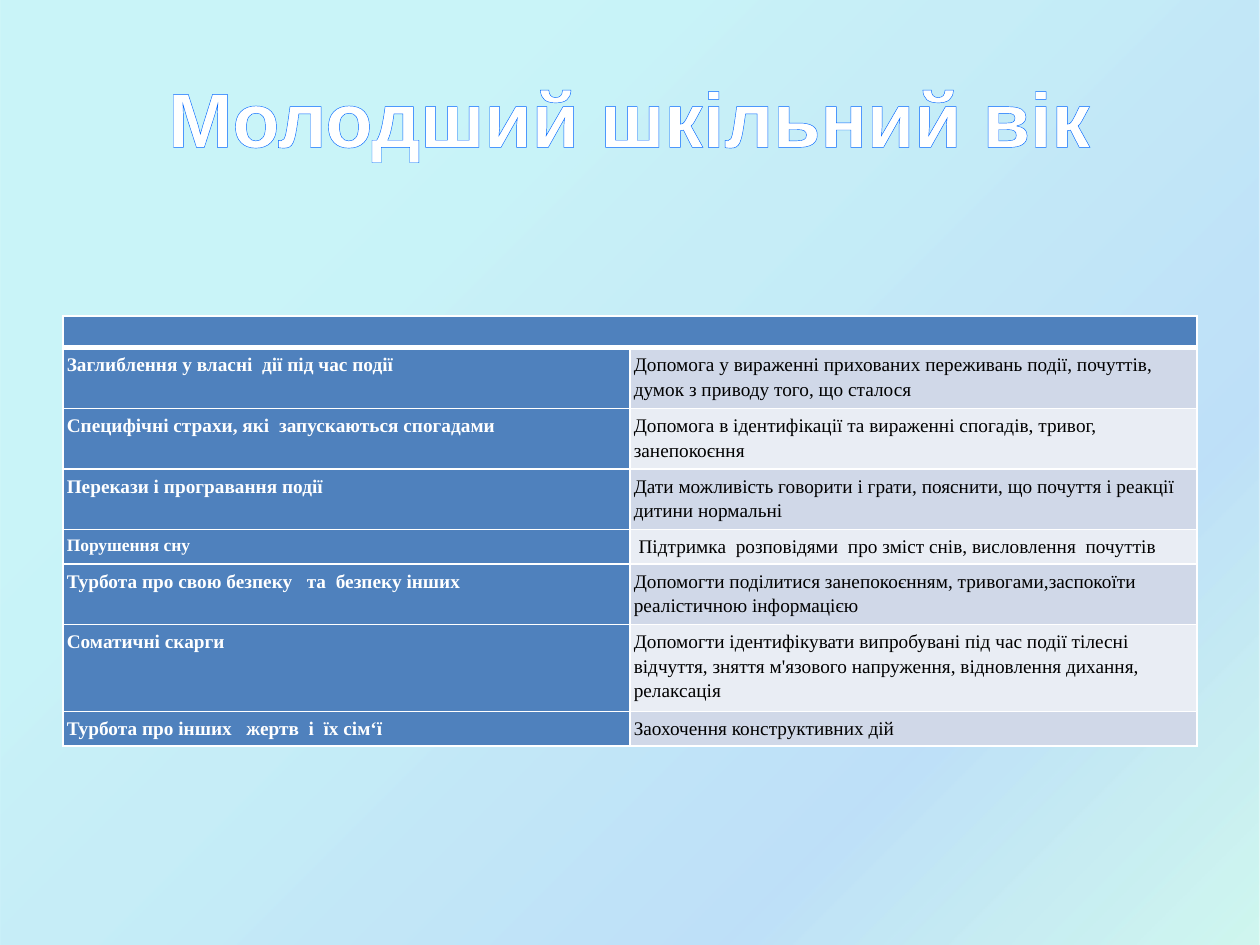
from dataclasses import dataclass

from lxml import etree
from pptx import Presentation
from pptx.dml.color import RGBColor
from pptx.enum.shapes import MSO_SHAPE
from pptx.enum.text import MSO_ANCHOR, PP_ALIGN
from pptx.oxml.ns import qn
from pptx.util import Pt

RECT = MSO_SHAPE.RECTANGLE
MIDDLE = MSO_ANCHOR.MIDDLE
TOP = MSO_ANCHOR.TOP
CENTER = PP_ALIGN.CENTER
LEFT = PP_ALIGN.LEFT


@dataclass(frozen=True)
class Theme:
    head: str = "Arial"
    body: str = "Times New Roman"
    big: float = 44
    text: float = 11
    small: float = 10
    white: str = "FFFFFF"
    black: str = "000000"
    blue: str = "4F81BD"
    edge: str = "0066FF"
    bands: tuple = ("D0D8E8", "E9EDF4")
    # position, colour and opacity, the first and last in percent
    stops: tuple = ((25, "21D6E0", 23), (75, "0087E6", 25),
                    (100, "03D4A8", 18), (100, "005CBF", 26))


def add(node, tag, **attrs):
    return etree.SubElement(node, qn(tag), {k: str(v) for k, v in attrs.items()})


def stroke(node, tag, color, width):
    """Append a solid line, such as a cell border or a text outline."""
    line = add(node, tag, w=int(Pt(width)))
    add(add(line, "a:solidFill"), "a:srgbClr", val=color)
    return line


class Deck:
    def __init__(self, theme, width, height):
        self.theme = theme
        self.file = Presentation()
        self.file.slide_width = Pt(width)
        self.file.slide_height = Pt(height)
        self.slide = self.file.slides.add_slide(self.file.slide_layouts[6])

    def run(self, para, text, font, size, color, bold):
        run = para.add_run()
        run.text = text
        run.font.name = font
        run.font.size = Pt(size)
        run.font.bold = bold
        run.font.color.rgb = RGBColor.from_string(color)
        return run

    def wash(self, *box):
        """Add a rectangle with the theme's translucent gradient."""
        shape = self.slide.shapes.add_shape(RECT, *map(Pt, box))
        shape.shadow.inherit = False
        shape.line.fill.background()
        shape.fill.gradient()
        shape.fill.gradient_angle = 315
        stops = shape._element.spPr.find(".//" + qn("a:gsLst"))
        for old in list(stops):
            stops.remove(old)
        for place, color, alpha in self.theme.stops:
            stop = add(stops, "a:gs", pos=place * 1000)
            tint = add(stop, "a:srgbClr", val=color)
            add(tint, "a:alpha", val=alpha * 1000)

    def title(self, text, *box):
        look = self.theme
        frame = self.slide.shapes.add_textbox(*map(Pt, box)).text_frame
        frame.word_wrap = True
        frame.vertical_anchor = MIDDLE
        para = frame.paragraphs[0]
        para.alignment = CENTER
        run = self.run(para, text, look.head, look.big, look.white, True)
        props = run._r.get_or_add_rPr()
        props.insert(0, stroke(props, "a:ln", look.edge, 1.45))

    def cell(self, cell, fill, top=1, bottom=1):
        """Set the margins, borders and fill of a cell."""
        cell.margin_left = cell.margin_right = Pt(2.16)
        cell.margin_top = cell.margin_bottom = Pt(2.16)
        cell.vertical_anchor = TOP
        props = cell._tc.get_or_add_tcPr()
        for side, width in zip("LRTB", (1, 1, top, bottom)):
            stroke(props, "a:ln" + side, self.theme.white, width)
        cell.fill.solid()
        cell.fill.fore_color.rgb = RGBColor.from_string(fill)

    def label(self, cell, text, size, color, bold, indent=0):
        para = cell.text_frame.paragraphs[0]
        para.alignment = LEFT
        para.line_spacing = 1.15
        if indent:
            para._p.get_or_add_pPr().set("indent", str(int(Pt(indent))))
        self.run(para, text, self.theme.body, size, color, bold)

    def table(self, rows, left, top, width, heights):
        look = self.theme
        grid = self.slide.shapes.add_table(
            len(rows) + 1, 2, Pt(left), Pt(top), Pt(width), Pt(sum(heights))).table
        grid.first_row = grid.horz_banding = False
        for row, height in zip(grid.rows, heights):
            row.height = Pt(height)

        for cell in grid.rows[0].cells:
            self.cell(cell, look.blue, bottom=3)
            add(cell.text_frame.paragraphs[0]._p, "a:endParaRPr",
                sz=int(look.small * 100))
        grid.cell(0, 0).merge(grid.cell(0, 1))

        for i, (need, aid, size, indent) in enumerate(rows, 1):
            edge = 3 if i == 1 else 1
            name, note = grid.cell(i, 0), grid.cell(i, 1)
            self.cell(name, look.blue, top=edge)
            self.cell(note, look.bands[(i - 1) % 2], top=edge)
            self.label(name, need, size, look.white, True)
            self.label(note, aid, look.text, look.black, False, indent)


def main():
    look = Theme()
    rows = [
        ("Заглиблення у власні  дії під час події",
         "Допомога у вираженні прихованих переживань події, почуттів, "
         "думок з приводу того, що сталося", look.text, 0),
        ("Специфічні страхи, які  запускаються спогадами",
         "Допомога в ідентифікації та вираженні спогадів, тривог, "
         "занепокоєння", look.text, 0),
        ("Перекази і програвання події",
         "Дати можливість говорити і грати, пояснити, що почуття і реакції "
         "дитини нормальні", look.text, 0),
        ("Порушення сну",
         "Підтримка  розповідями  про зміст снів, висловлення  почуттів",
         look.small, 2.75),
        ("Турбота про свою безпеку   та  безпеку інших",
         "Допомогти поділитися занепокоєнням, тривогами,заспокоїти "
         "реалістичною інформацією", look.text, 0),
        ("Соматичні скарги",
         "Допомогти ідентифікувати випробувані під час події тілесні "
         "відчуття, зняття м'язового напруження, відновлення дихання, "
         "релаксація", look.text, 0),
        ("Турбота про інших   жертв  і  їх сім‘ї",
         "Заохочення конструктивних дій", look.text, 0),
    ]
    one, two, three = 18.5, 32.6, 46.8
    deck = Deck(look, 720, 540)
    deck.wash(0, 0, 720, 552)
    deck.title("Молодший шкільний вік", 36, 21.6, 648, 90)
    deck.table(rows, 36, 180.7, 648, (18, two, two, two, one, two, three, one))
    deck.file.save("out.pptx")


if __name__ == "__main__":
    main()
